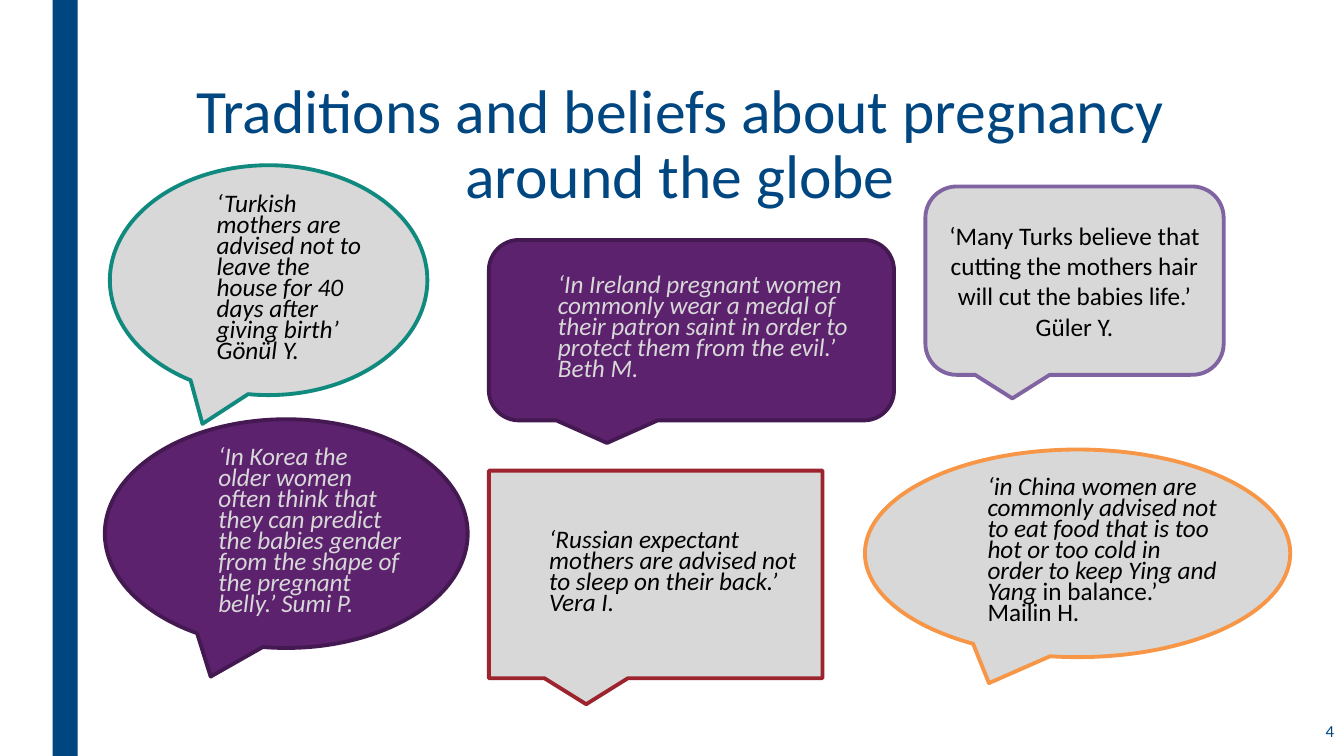
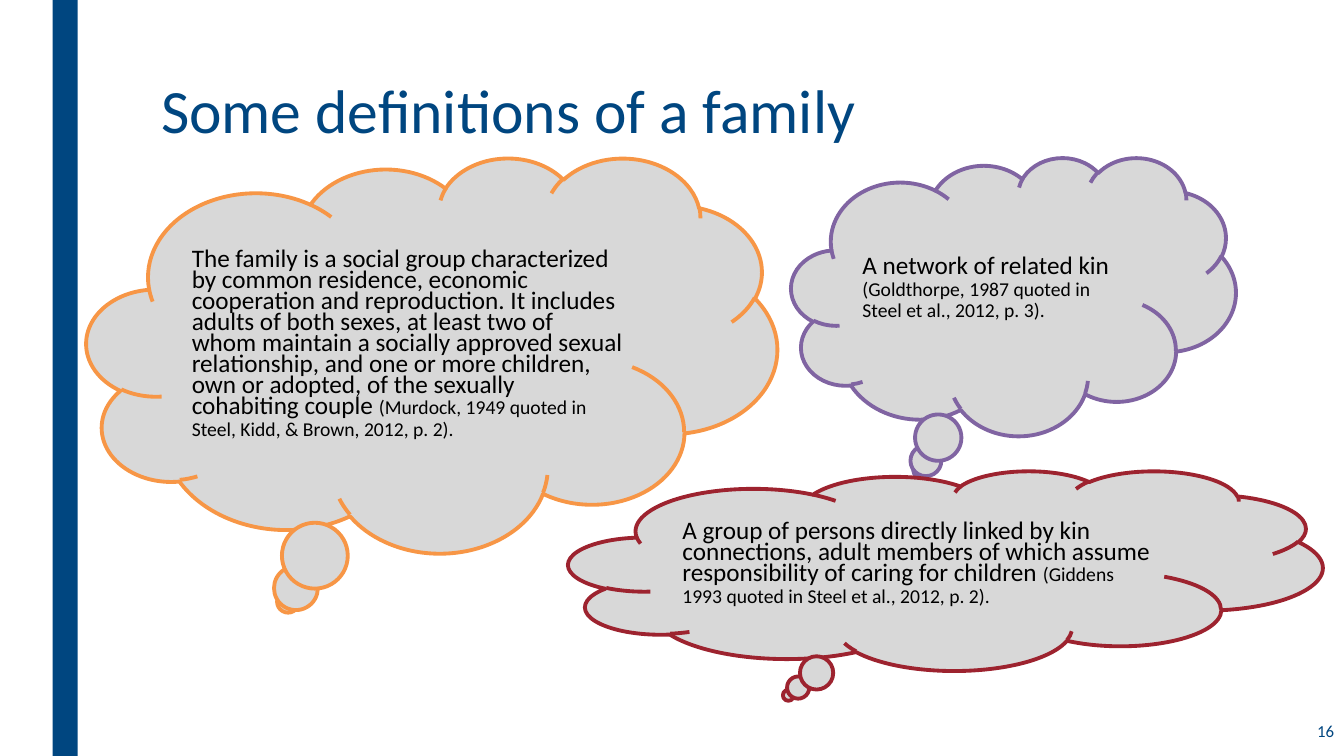
from pptx import Presentation
from pptx.dml.color import RGBColor
from pptx.enum.shapes import MSO_SHAPE
from pptx.enum.text import MSO_ANCHOR, PP_ALIGN
from pptx.util import Pt

RECTANGLE = MSO_SHAPE.RECTANGLE
ELLIPSE_CALLOUT = MSO_SHAPE.OVAL_CALLOUT
ROUND_CALLOUT = MSO_SHAPE.ROUNDED_RECTANGULAR_CALLOUT
SQUARE_CALLOUT = MSO_SHAPE.RECTANGULAR_CALLOUT
CLOUD_CALLOUT = MSO_SHAPE.CLOUD_CALLOUT
LEFT, CENTER, RIGHT = PP_ALIGN.LEFT, PP_ALIGN.CENTER, PP_ALIGN.RIGHT
TOP, MIDDLE = MSO_ANCHOR.TOP, MSO_ANCHOR.MIDDLE

FONT = "Calibri"
COLOURS = {
    "white": "FFFFFF", "black": "000000", "navy": "004680", "grey": "D8D8D8",
    "teal": "108A7E", "lilac": "8064A2", "red": "9D232F", "orange": "F79646",
    "purple": "5C226E", "plum": "441951",
}
SLIDE_SIZE = (960, 540)
BAR_BOX = (37.5, 0, 18, 540)
TITLE_BOX = (108, 54, 756, 116.6)
NUMBER_BOX = (834, 506.2, 126, 31.7)
TIGHT = Pt(15)

# Each quote: outline, box, fill, line, text colour, runs of (text, italic)
QUOTES = [
    (ELLIPSE_CALLOUT, (78.5, 118, 226.8, 164.2), "grey", "teal", "black",
     [("‘Turkish mothers are advised not to leave the house for 40 days after "
       "giving birth’ Gönül Y.", True)]),
    (SQUARE_CALLOUT, (349.2, 336.2, 238.3, 148.3), "grey", "red", "black",
     [("‘Russian expectant mothers are advised not to sleep on their back.’ "
       "Vera I.", True)]),
    (ELLIPSE_CALLOUT, (617.8, 321.1, 303.8, 148.3), "grey", "orange", "black",
     [("‘in China women are commonly advised not to eat food that is too hot "
       "or too cold in order to keep Ying and Yang", True),
      (" in balance.’ Mailin H.", False)]),
    (ELLIPSE_CALLOUT, (74.9, 299.5, 259.2, 163.4), "purple", "plum", "grey",
     [("‘In Korea the older women often think that they can predict the "
       "babies gender from the shape of the pregnant belly.’ Sumi P.", True)]),
    (ROUND_CALLOUT, (349.2, 171.4, 289.4, 128.9), "purple", "plum", "grey",
     [("‘In Ireland pregnant women commonly wear a medal of their patron "
       "saint in order to protect them from the evil.’ Beth M.", True)]),
]
CENTRED_QUOTE_BOX = (661, 133.2, 213.1, 134.6)
CENTRED_QUOTE = ("‘Many Turks believe that cutting the mothers hair will cut "
                 "the babies life.’ Güler Y.")

# Each definition: box, line, wording, citation
DEFINITIONS = [
    ((61.9, 112.3, 493.2, 282.2), "orange",
     "The family is a social group characterized by common residence, economic "
     "cooperation and reproduction. It includes adults of both sexes, at least "
     "two of whom maintain a socially approved sexual relationship, and one or "
     "more children, own or adopted, of the sexually cohabiting couple ",
     "(Murdock, 1949 quoted in Steel, Kidd, & Brown, 2012, p. 2)."),
    ((565.2, 112.3, 317.5, 198.7), "lilac",
     "A network of related kin ",
     "(Goldthorpe, 1987 quoted in Steel et al., 2012, p. 3)."),
    ((406.1, 336.2, 538.6, 142.6), "red",
     "A group of persons directly linked by kin connections, adult members of "
     "which assume responsibility of caring for children ",
     "(Giddens 1993 quoted in Steel et al., 2012, p. 2)."),
]


def colour(name):
    return RGBColor.from_string(COLOURS[name])


def points(box):
    return [Pt(length) for length in box]


def write_text(shape, runs, colour_name="black", align=LEFT, anchor=MIDDLE,
               spacing=None, indent=0):
    """Fill the shape with one paragraph of (text, size, italic) runs."""
    frame = shape.text_frame
    frame.word_wrap = True
    frame.vertical_anchor = anchor
    paragraph = frame.paragraphs[0]
    paragraph.alignment = align
    paragraph.line_spacing = spacing
    if indent:
        properties = paragraph._p.get_or_add_pPr()
        properties.set("marL", str(Pt(indent)))
        properties.set("indent", "0")
    for text, size, italic in runs:
        run = paragraph.add_run()
        run.text = text
        run.font.name = FONT
        run.font.size = Pt(size)
        run.font.italic = italic
        run.font.color.rgb = colour(colour_name)


def add_filled_shape(slide, kind, box, fill, line=None):
    shape = slide.shapes.add_shape(kind, *points(box))
    shape.shadow.inherit = False
    shape.fill.solid()
    shape.fill.fore_color.rgb = colour(fill)
    if line:
        shape.line.color.rgb = colour(line)
        shape.line.width = Pt(2.75)
    else:
        shape.line.fill.background()
    return shape


def add_base_slide(presentation, title, number, title_align=LEFT):
    """Start a slide with the side bar, title and page number."""
    slide = presentation.slides.add_slide(presentation.slide_layouts[6])
    slide.background.fill.solid()
    slide.background.fill.fore_color.rgb = colour("white")
    add_filled_shape(slide, RECTANGLE, BAR_BOX, "navy")
    write_text(slide.shapes.add_textbox(*points(TITLE_BOX)),
               [(title, 44, False)], "navy", title_align, TOP, spacing=0.89)
    write_text(slide.shapes.add_textbox(*points(NUMBER_BOX)),
               [(number, 12, False)], "navy", RIGHT)
    return slide


def build_traditions_slide(presentation):
    slide = add_base_slide(
        presentation, "Traditions and beliefs about pregnancy around the globe",
        "4", CENTER)
    # Centred quote
    callout = add_filled_shape(slide, ROUND_CALLOUT, CENTRED_QUOTE_BOX,
                               "grey", "lilac")
    write_text(callout, [(CENTRED_QUOTE, 18, False)], align=CENTER)
    # Indented quotes
    for kind, box, fill, line, text_colour, runs in QUOTES:
        callout = add_filled_shape(slide, kind, box, fill, line)
        write_text(callout, [(text, 18, italic) for text, italic in runs],
                   text_colour, spacing=TIGHT, indent=36)


def build_definitions_slide(presentation):
    slide = add_base_slide(presentation, "Some definitions of a family", "16")
    # Thought clouds
    for box, line, wording, citation in DEFINITIONS:
        cloud = add_filled_shape(slide, CLOUD_CALLOUT, box, "grey", line)
        write_text(cloud, [(wording, 18, False), (citation, 14, False)],
                   spacing=TIGHT)


def main():
    presentation = Presentation()
    presentation.slide_width, presentation.slide_height = points(SLIDE_SIZE)
    build_traditions_slide(presentation)
    build_definitions_slide(presentation)
    presentation.save("out.pptx")


if __name__ == "__main__":
    main()
